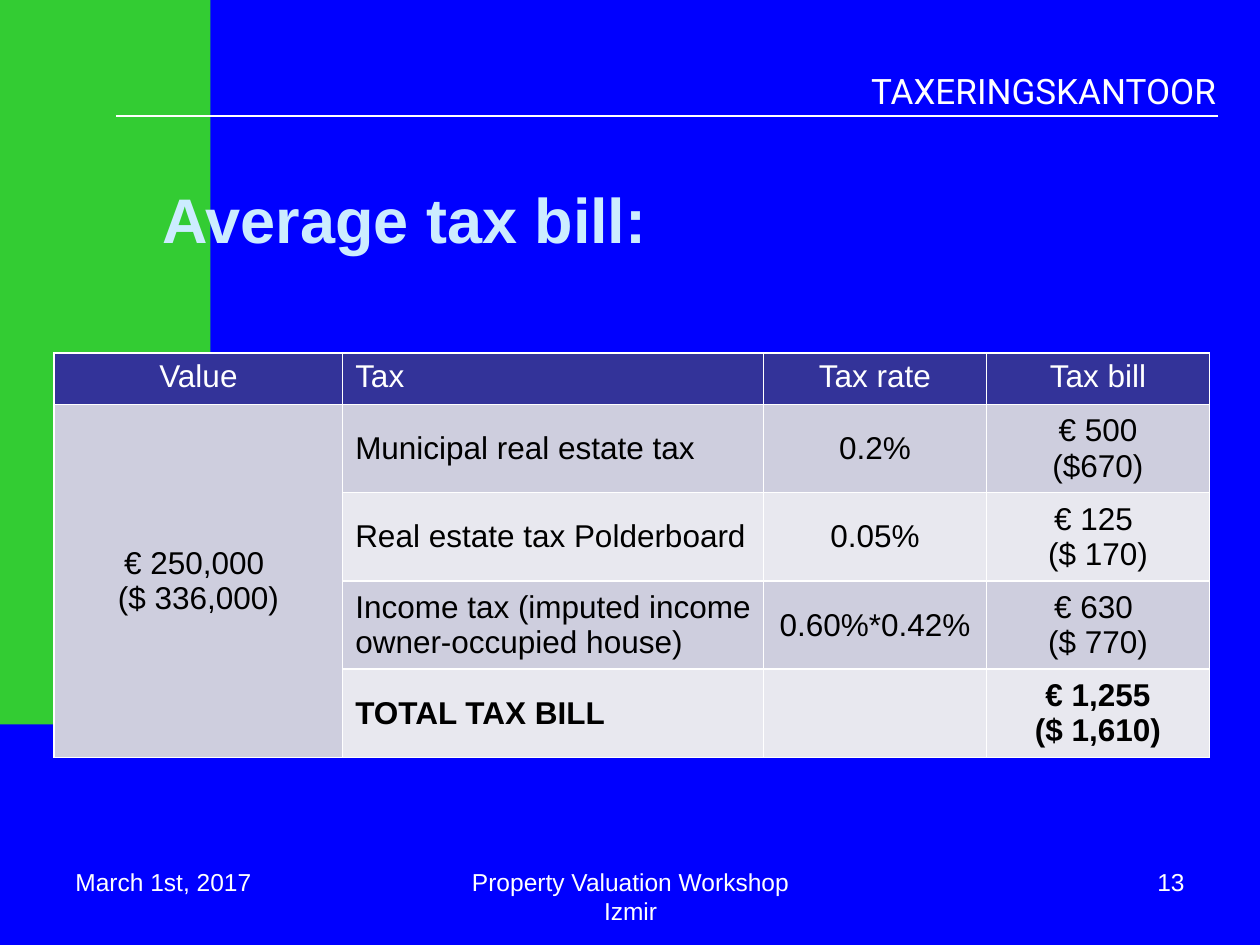
from lxml.etree import SubElement
from pptx import Presentation
from pptx.dml.color import RGBColor as RGB
from pptx.enum.shapes import MSO_CONNECTOR as CONN, MSO_SHAPE as SHAPE
from pptx.enum.text import MSO_ANCHOR as ANCHOR, PP_ALIGN as ALIGN
from pptx.oxml.ns import qn
from pptx.util import Inches, Pt

LEFT, CENTER, RIGHT = ALIGN.LEFT, ALIGN.CENTER, ALIGN.RIGHT

THEME = {
    "background": "0000FF", "band": "33CC33", "line": "FFFFFF",
    "head_fill": "333399", "row_fills": ("CECEDE", "E8E8EF"),
    "brand": {"name": "Roboto", "size": 20, "color": "FFFFFF"},
    "title": {"name": "Arial", "size": 36, "color": "CCECFF", "bold": True},
    "footer": {"name": "Arial", "size": 14, "color": "FFFFFF"},
    "head": {"name": "Arial", "size": 18, "color": "FFFFFF", "bold": False},
    "body": {"name": "Arial", "size": 18, "color": "000000", "bold": False},
}

# text, style, alignment, anchor, left inset, (left, top, width, height)
TEXTS = [
    ("TAXERINGSKANTOOR", "brand", RIGHT, ANCHOR.TOP, 0.1, (1.42, 0.5, 8.33, 1.58)),
    ("Average tax bill:", "title", LEFT, ANCHOR.MIDDLE, 0.31, (0.98, 1.23, 8.99, 1)),
    ("March 1st, 2017", "footer", LEFT, ANCHOR.TOP, 0.1, (0.5, 6.83, 2.33, 0.52)),
    ("Property Valuation Workshop Izmir", "footer", CENTER, ANCHOR.TOP, 0.1,
     (3.42, 6.83, 3.17, 0.52)),
    ("13", "footer", RIGHT, ANCHOR.TOP, 0.1, (7.17, 6.83, 2.33, 0.52)),
]

ROWS = [
    ("Value", "Tax", "Tax rate", "Tax bill"),
    ("€ 250,000 \n($ 336,000)", "Municipal real estate tax", "0.2%", "€ 500\n($670)"),
    ("", "Real estate tax Polderboard", "0.05%", "€ 125 \n($ 170)"),
    ("", "Income tax (imputed income owner-occupied house)", "0.60%*0.42%",
     "€ 630 \n($ 770)"),
    ("", "TOTAL TAX BILL", "", "€ 1,255\n($ 1,610)"),
]
COL_WIDTHS = (2.29, 3.34, 1.77, 1.77)
COL_ALIGNS = (CENTER, LEFT, CENTER, CENTER)
HEAD_HEIGHT, ROW_HEIGHT = 0.41, 0.66
TABLE_LEFT, TABLE_TOP = 0.43, 2.8


def inches(values):
    return [Inches(v) for v in values]


def write(tf, text, style, align):
    tf.text = text
    for p in tf.paragraphs:
        p.alignment = align
        for r in p.runs:
            for key, value in style.items():
                if key == "color":
                    r.font.color.rgb = RGB.from_string(value)
                else:
                    setattr(r.font, key, Pt(value) if key == "size" else value)


def fill(target, color):
    target.fill.solid()
    target.fill.fore_color.rgb = RGB.from_string(color)


def add_master_shapes(s):
    band = s.shapes.add_shape(SHAPE.RECTANGLE, *inches((0, 0, 1.67, 5.75)))
    band.shadow.inherit = False
    fill(band, THEME["band"])
    band.line.fill.background()
    rule = s.shapes.add_connector(CONN.STRAIGHT, *inches((9.67, 0.92, 0.92, 0.92)))
    rule.line.color.rgb = RGB.from_string(THEME["line"])
    rule.line.width = Pt(1)
    SubElement(rule._element.spPr, qn("a:effectLst"))


def add_text(s, text, style, align, anchor, inset, box):
    tf = s.shapes.add_textbox(*inches(box)).text_frame
    tf.word_wrap = True
    tf.vertical_anchor = anchor
    tf.margin_left = Inches(inset)
    write(tf, text, THEME[style], align)


def add_tax_table(s):
    """Fill every cell; the white grid comes from the default table style."""
    heights = [HEAD_HEIGHT] + [ROW_HEIGHT] * (len(ROWS) - 1)
    box = inches((TABLE_LEFT, TABLE_TOP, sum(COL_WIDTHS), sum(heights)))
    table = s.shapes.add_table(len(ROWS), len(COL_WIDTHS), *box).table
    for col, width in zip(table.columns, COL_WIDTHS):
        col.width = Inches(width)
    for i, (values, height) in enumerate(zip(ROWS, heights)):
        table.rows[i].height = Inches(height)
        color = THEME["row_fills"][(i - 1) % 2] if i else THEME["head_fill"]
        style = dict(THEME["body" if i else "head"], bold=i == len(ROWS) - 1)
        for j, (text, align) in enumerate(zip(values, COL_ALIGNS)):
            cell = table.cell(i, j)
            write(cell.text_frame, text, style, align)
            cell.vertical_anchor = ANCHOR.MIDDLE if i else ANCHOR.TOP
            if align == LEFT:
                cell.margin_right = Inches(0.08)
            fill(cell, color)
    table.cell(1, 0).merge(table.cell(len(ROWS) - 1, 0))


def main():
    prs = Presentation()
    prs.slide_width, prs.slide_height = inches((10, 7.5))
    s = prs.slides.add_slide(prs.slide_layouts[6])
    fill(s.background, THEME["background"])
    add_master_shapes(s)
    for item in TEXTS:
        add_text(s, *item)
    add_tax_table(s)
    prs.save("out.pptx")


if __name__ == "__main__":
    main()
